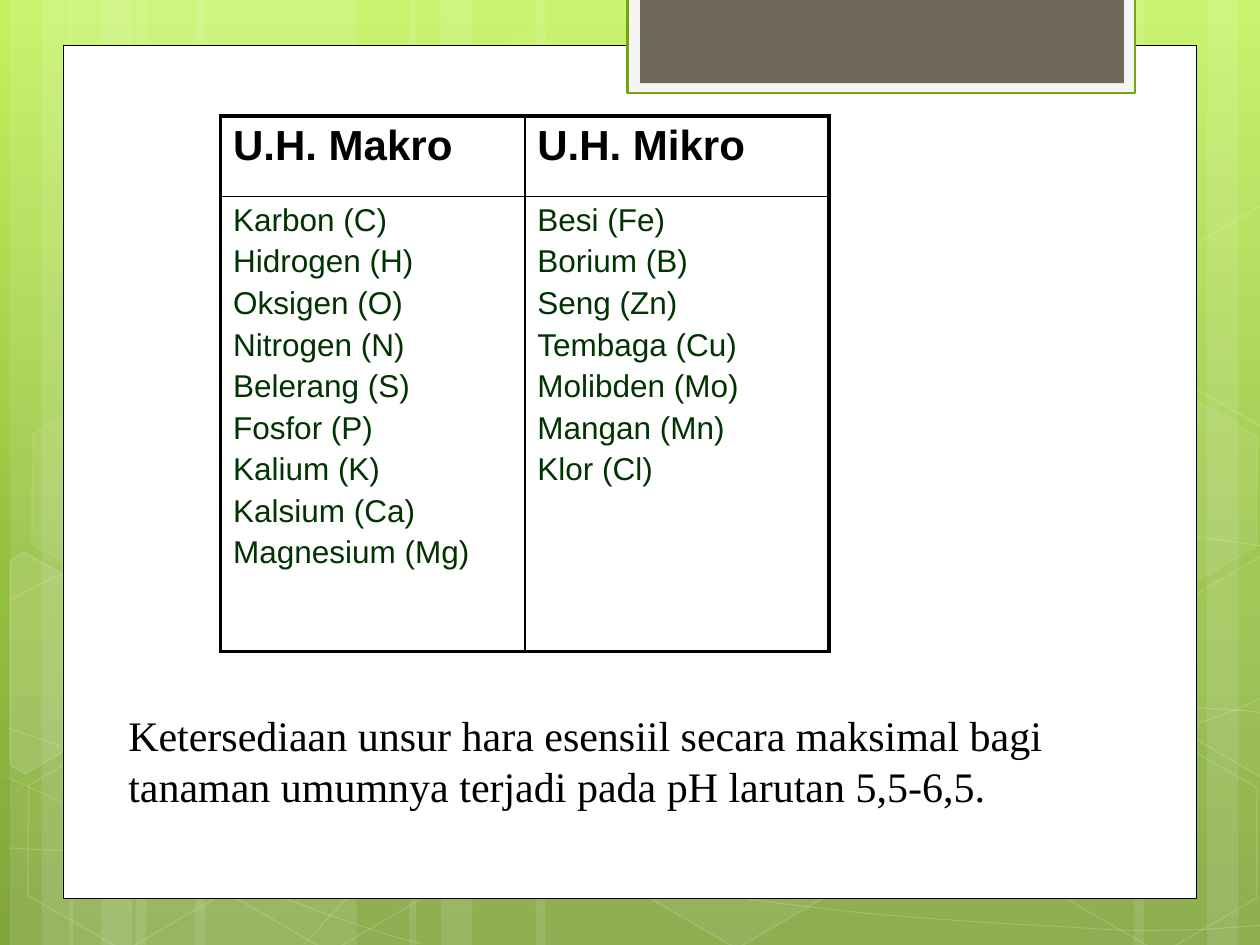
from copy import deepcopy
from math import cos, radians, sin
from typing import NamedTuple, Optional

from lxml.etree import SubElement
from pptx import Presentation
from pptx.dml.color import RGBColor
from pptx.enum.shapes import MSO_SHAPE as Preset
from pptx.enum.text import MSO_ANCHOR as Anchor
from pptx.oxml.ns import qn
from pptx.util import Inches, Pt

COLORS = {
    "white": "FFFFFF", "black": "000000", "element": "003300",
    "sky": "C3F35F", "leaf": "93BF3F", "moss": "81A53E",
    "tab_edge": "F5F5F5", "tab_line": "74A510", "tab": "71685A",
}
TILT = 30
Point = tuple[float, float]


class Band(NamedTuple):
    left: float
    width: float


class Hexagon(NamedTuple):
    left: float
    top: float
    fill_opacity: int
    line_opacity: int


class Cutout(NamedTuple):
    """Tilted hexagon cut off by the slide edge."""
    center: Point
    corners: list[Point]
    fill_opacity: int


BANDS = [Band(*band) for band in (
    (1.08, 1.75), (0.08, 0.5), (0.33, 0.83), (1.55, 1.75), (0.55, 0.5), (0.8, 0.83),
    (7.33, 1.75), (9.58, 0.5), (9, 0.83), (4.25, 3.08), (3.25, 0.5), (3.5, 0.83))]

# Each curve is a start point followed by Bezier triples.
CURVES: list[list[Point]] = [
    [(0.07, 6.73), (0.61, 6.76), (1.15, 6.79), (1.9, 6.78), (2.65, 6.77), (3.58, 6.75),
     (4.58, 6.65), (5.58, 6.55), (7, 6.36), (7.92, 6.17), (8.83, 5.98), (9.77, 5.68),
     (10.07, 5.51)],
    [(0.07, 4.77), (0.36, 4.61), (0.65, 4.46), (1.21, 4.31), (1.78, 4.16), (2.59, 3.94),
     (3.47, 3.87), (4.36, 3.8), (5.44, 3.79), (6.54, 3.87), (7.64, 3.95), (9.47, 4.26),
     (10.07, 4.34)],
    [(0.06, 6.17), (1.27, 6.72), (2.47, 7.27), (3.34, 7.49)],
    [(0.07, 5.78), (0.38, 5.89), (0.7, 6), (1.28, 6.16), (1.86, 6.31), (2.73, 6.56),
     (3.57, 6.73), (4.4, 6.9), (5.45, 7.08), (6.28, 7.18), (7.11, 7.29), (8, 7.33),
     (8.53, 7.36), (9.05, 7.4), (9.19, 7.38), (9.45, 7.38), (9.71, 7.37), (9.89, 7.35),
     (10.07, 7.34)],
    [(2.42, 7.49), (2.6, 7.29), (2.78, 7.09), (3.02, 6.91), (3.26, 6.73), (3.6, 6.53),
     (3.88, 6.39), (4.16, 6.25), (4.33, 6.19), (4.7, 6.09), (5.06, 5.99), (5.73, 5.85),
     (6.08, 5.78), (6.44, 5.71), (6.49, 5.71), (6.8, 5.69), (7.11, 5.66), (7.6, 5.63),
     (7.94, 5.62), (8.29, 5.61), (8.86, 5.62), (8.86, 5.62), (9.08, 5.62), (9.31, 5.62),
     (9.53, 5.62), (9.71, 5.63), (9.88, 5.64), (9.97, 5.65), (10.06, 5.66), (10.03, 5.65),
     (10.06, 5.66)],
]

HEXAGONS = [Hexagon(*cell) for cell in (
    (3.34, 0.36, 4, 8), (4.97, 5.89, 6, 12), (0.11, 5.91, 0, 12), (0.14, 3.12, 7, 8),
    (1.74, 5.92, 0, 12), (7.53, 4.53, 10, 12), (8.34, 5.93, 0, 12), (8.34, 3.14, 7, 8))]

CUTOUTS = [
    Cutout((0.36, 5.35), [(0.08, 4.45), (0.19, 4.38), (0.96, 4.82), (0.95, 5.7),
                          (0.2, 6.14), (0.08, 6.07)], 10),
    Cutout((9.85, 5.2), [(9.26, 4.85), (10.01, 4.41), (10.09, 4.46), (10.09, 6.13),
                         (10.02, 6.17), (9.26, 5.73)], 4),
    Cutout((9.85, 2.41), [(9.26, 2.07), (10.01, 1.63), (10.1, 1.68), (10.09, 3.35),
                          (10.02, 3.39), (9.26, 2.95)], 0),
]

NUTRIENTS = {
    "U.H. Makro": ["Karbon (C)", "Hidrogen (H)", "Oksigen (O)", "Nitrogen (N)",
                   "Belerang (S)", "Fosfor (P)", "Kalium (K)", "Kalsium (Ca)",
                   "Magnesium (Mg)"],
    "U.H. Mikro": ["Besi (Fe)", "Borium (B)", "Seng (Zn)", "Tembaga (Cu)",
                   "Molibden (Mo)", "Mangan (Mn)", "Klor (Cl)"],
}
CONCLUSION = ("Ketersediaan unsur hara esensiil secara maksimal bagi tanaman "
              "umumnya terjadi pada pH larutan 5,5-6,5.")


def rgb(name: str) -> RGBColor:
    return RGBColor.from_string(COLORS[name])


def set_opacity(holder, percent: int) -> None:
    """Make the solid fill directly inside the holder element translucent."""
    if percent < 100:
        color = holder.find(qn("a:solidFill"))[0]
        SubElement(color, qn("a:alpha"), val=str(percent * 1000))


def style(shape, fill: Optional[str] = None, fill_opacity: int = 100,
          line: Optional[str] = None, line_width: float = 1,
          line_opacity: int = 100) -> None:
    shape.shadow.inherit = False
    properties = shape.element.spPr
    if fill and fill_opacity:
        shape.fill.solid()
        shape.fill.fore_color.rgb = rgb(fill)
        set_opacity(properties, fill_opacity)
    else:
        shape.fill.background()
    if line:
        shape.line.color.rgb = rgb(line)
        shape.line.width = Pt(line_width)
        set_opacity(properties.find(qn("a:ln")), line_opacity)
    else:
        shape.line.fill.background()


def add_preset(slide, preset: Preset, left: float, top: float, width: float, height: float):
    return slide.shapes.add_shape(
        preset, Inches(left), Inches(top), Inches(width), Inches(height))


def add_outline(slide, points: list[Point], close: bool):
    start, *rest = [(Inches(x), Inches(y)) for x, y in points]
    builder = slide.shapes.build_freeform(*start)
    builder.add_line_segments(rest, close=close)
    return builder.convert_to_shape()


def add_curve(slide, points: list[Point]):
    """Draw the control polygon, then join each three of its lines into a Bezier."""
    curve = add_outline(slide, points, close=False)
    outline = curve.element.find(".//" + qn("a:path"))
    segments = outline.findall(qn("a:lnTo"))
    for i in range(0, len(segments), 3):
        bezier = SubElement(outline, qn("a:cubicBezTo"))
        for segment in segments[i:i + 3]:
            bezier.append(segment[0])
            outline.remove(segment)
    return curve


def add_cutout(slide, cutout: Cutout):
    """Build the outline upright and turn it with the shape's own rotation."""
    (x, y), c, s = cutout.center, cos(radians(TILT)), sin(radians(TILT))
    upright = [(x + (px - x) * c + (py - y) * s, y - (px - x) * s + (py - y) * c)
               for px, py in cutout.corners]
    shape = add_outline(slide, upright, close=True)
    shape.rotation = TILT
    return shape


def paint_background(slide) -> None:
    fill = slide.background.fill
    fill.gradient()
    fill.gradient_angle = 270
    stop_list = slide.element.find(".//" + qn("a:gsLst"))
    stop_list.append(deepcopy(stop_list[-1]))
    for stop, (position, name) in zip(
            fill.gradient_stops, ((0, "sky"), (0.62, "leaf"), (1, "moss"))):
        stop.position = position
        stop.color.rgb = rgb(name)


def add_decoration(slide) -> None:
    for band in BANDS:
        style(add_preset(slide, Preset.RECTANGLE, band.left, 0, band.width, 7.5), "white", 10)
    for curve in CURVES:
        style(add_curve(slide, curve), line="white", line_width=0.5, line_opacity=20)
    for cell in HEXAGONS:
        hexagon = add_preset(slide, Preset.HEXAGON, cell.left, cell.top, 1.75, 1.52)
        hexagon.adjustments[0] = 0.285
        hexagon.rotation = TILT
        style(hexagon, "white", cell.fill_opacity, "white", 1, cell.line_opacity)
    for cutout in CUTOUTS:
        style(add_cutout(slide, cutout), "white", cutout.fill_opacity, "white", 1, 12)


def add_panel(slide) -> None:
    style(add_preset(slide, Preset.RECTANGLE, 0.5, 0.36, 9, 6.77),
          "white", line="black", line_width=0.5)
    style(add_preset(slide, Preset.RECTANGLE, 4.98, -0.02, 4.03, 0.76),
          "tab_edge", line="tab_line", line_width=1.25)
    style(add_preset(slide, Preset.RECTANGLE, 5.08, -0.02, 3.84, 0.68), "tab")


def format_runs(paragraph, font: str, size: int, color: str, bold: bool = False) -> None:
    for run in paragraph.runs:
        run.font.name, run.font.size, run.font.bold = font, Pt(size), bold
        run.font.color.rgb = rgb(color)


def set_borders(cell, row: int, column: int) -> None:
    """Thick lines around the two-by-two table, thin ones inside it."""
    outer = {"a:lnL": column == 0, "a:lnR": column == 1, "a:lnT": row == 0, "a:lnB": row == 1}
    for tag, is_outer in outer.items():
        line = SubElement(cell._tc.get_or_add_tcPr(), qn(tag), w=str(Pt(2.25 if is_outer else 1)))
        SubElement(SubElement(line, qn("a:solidFill")), qn("a:srgbClr"), val=COLORS["black"])


def fill_cell(cell, lines: list[str], size: int, color: str, bold: bool) -> None:
    cell.vertical_anchor = Anchor.TOP
    cell.fill.background()
    cell.text_frame.text = "\n".join(lines)
    for paragraph in cell.text_frame.paragraphs:
        spacing = SubElement(paragraph._p.get_or_add_pPr(), qn("a:spcBef"))
        SubElement(spacing, qn("a:spcPct"), val="20000")
        format_runs(paragraph, "Arial", size, color, bold)


def add_nutrient_table(slide) -> None:
    width = Inches(4.83)
    table = slide.shapes.add_table(
        2, 2, Inches(1.75), Inches(0.92), width, Inches(4.25)).table
    table.first_row = table.horz_banding = False
    table.rows[0].height, table.rows[1].height = Inches(0.64), Inches(3.61)
    for column, (heading, elements) in enumerate(NUTRIENTS.items()):
        table.columns[column].width = width // 2
        for row in range(2):
            set_borders(table.cell(row, column), row, column)
        fill_cell(table.cell(0, column), [heading], 24, "black", True)
        fill_cell(table.cell(1, column), elements, 18, "element", False)


def add_conclusion(slide) -> None:
    frame = slide.shapes.add_textbox(
        Inches(0.92), Inches(5.58), Inches(8.17), Inches(0.91)).text_frame
    frame.word_wrap = True
    frame.text = CONCLUSION
    frame.paragraphs[0].line_spacing = Pt(29)
    format_runs(frame.paragraphs[0], "Times New Roman", 24, "black")


def main() -> None:
    deck = Presentation()
    deck.slide_width, deck.slide_height = Inches(10), Inches(7.5)
    slide = deck.slides.add_slide(deck.slide_layouts[6])
    paint_background(slide)
    add_decoration(slide)
    add_panel(slide)
    add_nutrient_table(slide)
    add_conclusion(slide)
    deck.save("out.pptx")


if __name__ == "__main__":
    main()
